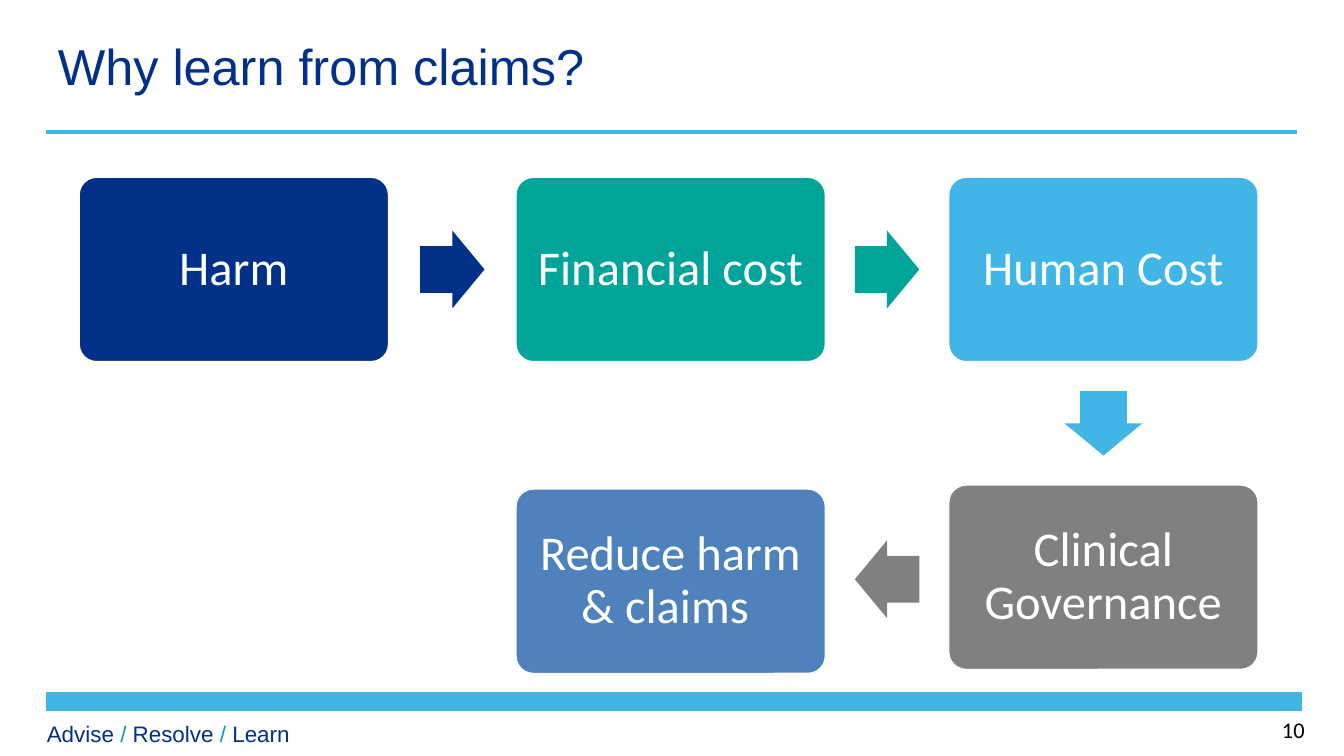
from itertools import pairwise

from lxml import etree
from pptx import Presentation
from pptx.dml.color import RGBColor
from pptx.enum.shapes import MSO_CONNECTOR, MSO_SHAPE
from pptx.enum.text import MSO_ANCHOR, PP_ALIGN
from pptx.oxml.ns import qn
from pptx.util import Inches, Pt

STRAIGHT = MSO_CONNECTOR.STRAIGHT
ROUNDED = MSO_SHAPE.ROUNDED_RECTANGLE
ARROW = MSO_SHAPE.RIGHT_ARROW
MIDDLE = MSO_ANCHOR.MIDDLE
LEFT, CENTER = PP_ALIGN.LEFT, PP_ALIGN.CENTER

COLORS = {
    "navy": "003087", "teal": "00A499", "slash": "00A291", "sky": "41B6E6",
    "gray": "808080", "blue": "4F81BD", "white": "FFFFFF", "black": "000000",
}
COLUMNS = (0.58, 3.83, 7.05)
ROWS = (1.31, 3.6, 3.63)
BOX_WIDTH, BOX_HEIGHT = 2.32, 1.39
ARROW_WIDTH, ARROW_HEIGHT = 0.48, 0.58
STEPS = (
    ("Harm", "navy", 0, 0, 0),
    ("Financial cost", "teal", 1, 0, 0),
    ("Human Cost", "sky", 2, 0, 90),
    ("Clinical Governance", "gray", 2, 1, 180),
    ("Reduce harm & claims ", "blue", 1, 2, None),
)
BOX_FRAME = {
    "word_wrap": True, "vertical_anchor": MIDDLE,
    "margin_left": Inches(0.11), "margin_right": Inches(0.11),
    "margin_top": Inches(0.11), "margin_bottom": Inches(0.11),
}


def color(name):
    return RGBColor.from_string(COLORS[name])


def apply_format(target, values):
    for name, value in values.items():
        setattr(target, name, value)


def add_span(para, text, shade, size, face="Arial"):
    span = para.add_run()
    span.text = text
    apply_format(span.font, {"size": Pt(size), "name": face})
    span.font.color.rgb = color(shade)


def add_rule(page, left, right, top, weight):
    rule = page.shapes.add_connector(
        STRAIGHT, Inches(left), Inches(top), Inches(right), Inches(top))
    rule.line.color.rgb = color("sky")
    rule.line.width = Pt(weight)
    properties = rule._element.find(qn("p:spPr"))
    etree.SubElement(properties, qn("a:effectLst"))


def add_title(page, text):
    title = page.shapes.title
    apply_format(title, {"left": Inches(0.33), "top": Inches(0.21),
                         "width": Inches(7.57), "height": Inches(0.55)})
    title.text_frame.vertical_anchor = MIDDLE
    para = title.text_frame.paragraphs[0]
    para.alignment = LEFT
    add_span(para, text, "navy", 27)


def add_label(page, left, top, width, spans, face):
    box = page.shapes.add_textbox(
        Inches(left), Inches(top), Inches(width), Inches(0.3))
    box.text_frame.word_wrap = True
    para = box.text_frame.paragraphs[0]
    for text, shade in spans:
        add_span(para, text, shade, 12, face)


def add_shape(page, kind, left, top, width, height, shade):
    shape = page.shapes.add_shape(
        kind, Inches(left), Inches(top), Inches(width), Inches(height))
    shape.shadow.inherit = False
    shape.fill.solid()
    shape.fill.fore_color.rgb = color(shade)
    return shape


def add_step(page, text, shade, column, row):
    box = add_shape(page, ROUNDED, COLUMNS[column], ROWS[row],
                    BOX_WIDTH, BOX_HEIGHT, shade)
    box.adjustments[0] = 0.1
    box.line.color.rgb = color("white")
    box.line.width = Pt(2)
    apply_format(box.text_frame, BOX_FRAME)
    para = box.text_frame.paragraphs[0]
    apply_format(para, {"alignment": CENTER, "line_spacing": 0.9})
    add_span(para, text, "white", 26, "Calibri")


def add_arrow(page, start, end):
    shade, column, row, rotation = start[1:]
    center_x = (COLUMNS[column] + COLUMNS[end[2]] + BOX_WIDTH) / 2
    center_y = (ROWS[row] + ROWS[end[3]] + BOX_HEIGHT) / 2
    arrow = add_shape(page, ARROW, center_x - ARROW_WIDTH / 2,
                      center_y - ARROW_HEIGHT / 2,
                      ARROW_WIDTH, ARROW_HEIGHT, shade)
    arrow.line.fill.background()
    arrow.adjustments[0] = 0.6
    arrow.adjustments[1] = 0.5
    arrow.rotation = rotation


def main():
    deck = Presentation()
    deck.slide_width = Inches(10)
    deck.slide_height = deck.slide_width * 9 // 16
    page = deck.slides.add_slide(deck.slide_layouts[5])
    add_title(page, "Why learn from claims?")
    add_rule(page, 0.34, 9.65, 0.98, 2)
    add_rule(page, 0.34, 9.69, 5.22, 10)
    motto = (("Advise ", "navy"), ("/", "slash"), (" Resolve ", "navy"),
             ("/", "slash"), (" Learn", "navy"))
    add_label(page, 0.25, 5.31, 2.48, motto, "Arial")
    add_label(page, 9.44, 5.28, 0.55, (("10", "black"),), "Calibri")
    for text, shade, column, row, _ in STEPS:
        add_step(page, text, shade, column, row)
    for start, end in pairwise(STEPS):
        add_arrow(page, start, end)
    deck.save("out.pptx")


if __name__ == "__main__":
    main()
